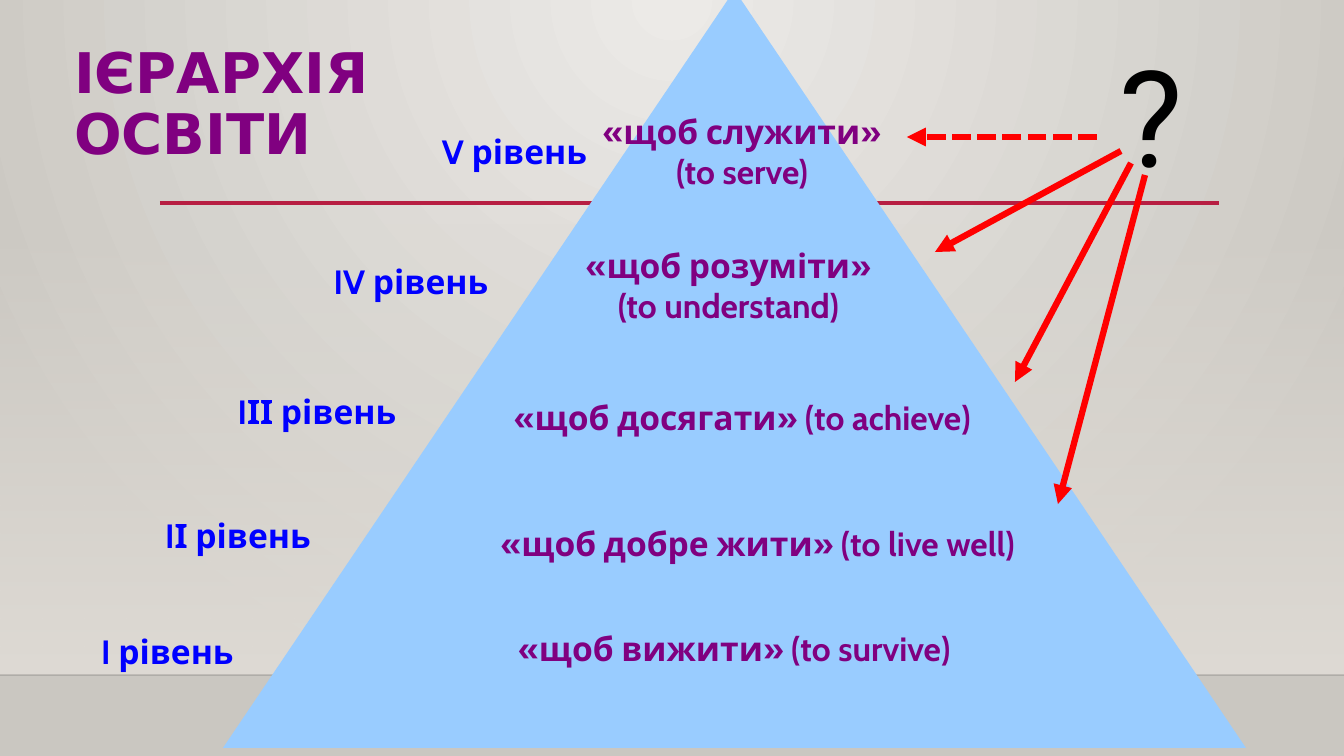
from lxml import etree
from pptx import Presentation
from pptx.dml.color import RGBColor
from pptx.enum.dml import MSO_LINE
from pptx.enum.shapes import MSO_CONNECTOR, MSO_SHAPE
from pptx.enum.text import MSO_ANCHOR, MSO_AUTO_SIZE, PP_ALIGN
from pptx.oxml.ns import qn
from pptx.util import Pt

PX = 914400 / 100.8
COLORS = {
    "wall_light": "ECEAE7", "wall_dark": "CAC7C1", "wall_fade": "DFDBD5",
    "floor_edge": "000001", "rule": "B71E42", "pyramid": "99CCFF",
    "purple": "800080", "blue": "0000FF", "red": "FF0000", "black": "000000",
}


def write(sp, text, font="Cabin", size=24, color="purple", bold=True,
          align=PP_ALIGN.CENTER, anchor=MSO_ANCHOR.MIDDLE, spacing=None):
    tf = sp.text_frame
    tf.text = text
    tf.word_wrap = False
    tf.auto_size = MSO_AUTO_SIZE.NONE
    tf.vertical_anchor = anchor
    for p in tf.paragraphs:
        p.alignment = align
        p.line_spacing = spacing
        for r in p.runs:
            r.font.name = font
            r.font.size = Pt(size)
            r.font.bold = bold
            r.font.color.rgb = RGBColor.from_string(COLORS[color])


def connect(points, color, width, arrow=False, dash=None, alpha=None):
    """Draw a straight line through (x1, y1, x2, y2) in px."""
    line = slide.shapes.add_connector(
        MSO_CONNECTOR.STRAIGHT, *[round(v * PX) for v in points])
    line.line.color.rgb = RGBColor.from_string(COLORS[color])
    line.line.width = Pt(width)
    if dash:
        line.line.dash_style = dash
    props = line._element.spPr
    ln = props.find(qn("a:ln"))
    if alpha:
        etree.SubElement(ln.find(".//" + qn("a:srgbClr")), qn("a:alpha"), val=str(alpha * 1000))
    if arrow:
        etree.SubElement(ln, qn("a:tailEnd"), type="triangle")
    etree.SubElement(props, qn("a:effectLst"))


prs = Presentation()
prs.slide_width, prs.slide_height = round(1344 * PX), round(756 * PX)
slide = prs.slides.add_slide(prs.slide_layouts[5])

# Wall: radial background, fading into a plain tone above the floor
fill = slide.background.fill
fill.gradient()
for stop, name in zip(fill.gradient_stops, ("wall_light", "wall_dark")):
    stop.color.rgb = RGBColor.from_string(COLORS[name])
grad = slide._element.find(".//" + qn("p:bgPr")).find(qn("a:gradFill"))
grad.remove(grad.find(qn("a:lin")))
radial = etree.Element(qn("a:path"), attrib={"path": "circle"})
etree.SubElement(radial, qn("a:fillToRect"), l="43000", t="0", r="43000", b="100000")
grad.find(qn("a:gsLst")).addnext(radial)

wall = slide.shapes.add_shape(
    MSO_SHAPE.RECTANGLE, 0, *[round(v * PX) for v in (223, 1344, 452)])
wall.shadow.inherit = False
wall.line.fill.background()
wall.fill.gradient()
wall.fill.gradient_angle = 270
for stop in wall.fill.gradient_stops:
    stop.color.rgb = RGBColor.from_string(COLORS["wall_fade"])
etree.SubElement(wall._element.spPr.find(".//" + qn("a:srgbClr")), qn("a:alpha"), val="0")

connect((0, 675, 1344, 675), "floor_edge", 1, alpha=20)
connect((160, 203, 1219, 203), "rule", 2.5)

title = slide.shapes.title
title.left, title.top, title.width, title.height = [
    round(v * PX) for v in (64, 48, 1058, 116)]
write(title, "ІЄРАРХІЯ\vОСВІТИ", font="DejaVu Sans", size=40,
      align=PP_ALIGN.LEFT, spacing=0.9)

pyramid = slide.shapes.add_shape(
    MSO_SHAPE.ISOSCELES_TRIANGLE, *[round(v * PX) for v in (223, -10, 1023, 758)])
pyramid.shadow.inherit = False
pyramid.fill.solid()
pyramid.fill.fore_color.rgb = RGBColor.from_string(COLORS["pyramid"])
pyramid.line.fill.background()

# Each level: label and its box, purpose and its box
LEVELS = [
    ("I рівень", (92, 622, 151, 58), "«щоб вижити» (to survive)", (491, 610, 487, 76)),
    ("IІ рівень", (150, 506, 176, 58), "«щоб добре жити» (to live well)", (485, 505, 546, 76)),
    ("IІІ рівень", (225, 382, 184, 58), "«щоб досягати» (to achieve)", (499, 379, 487, 76)),
    ("IV рівень", (327, 252, 168, 58), "«щоб розуміти»\n(to understand)", (485, 247, 487, 76)),
    ("V рівень", (439, 122, 151, 58), "«щоб служити»\n(to serve)", (515, 113, 454, 76)),
]
for label, label_box, purpose, purpose_box in LEVELS:
    for text, box, color in ((label, label_box, "blue"), (purpose, purpose_box, "purple")):
        write(slide.shapes.add_textbox(*[round(v * PX) for v in box]), text, color=color)

question = slide.shapes.add_textbox(*[round(v * PX) for v in (1110, 28, 83, 173)])
write(question, "?", font="Roboto", size=96, color="black", bold=False,
      align=PP_ALIGN.LEFT, anchor=MSO_ANCHOR.TOP)

ARROWS = [
    ((1121, 151, 935, 252), None),
    ((1131, 163, 1015, 382), None),
    ((1145, 175, 1058, 504), None),
    ((1097, 137, 907, 137), MSO_LINE.SQUARE_DOT),
]
for points, dash in ARROWS:
    connect(points, "red", 4.5, arrow=True, dash=dash)
# The dashed arrow uses the longer system dash
for dash in slide._element.iter(qn("a:prstDash")):
    dash.set("val", "sysDash")

prs.save("out.pptx")
